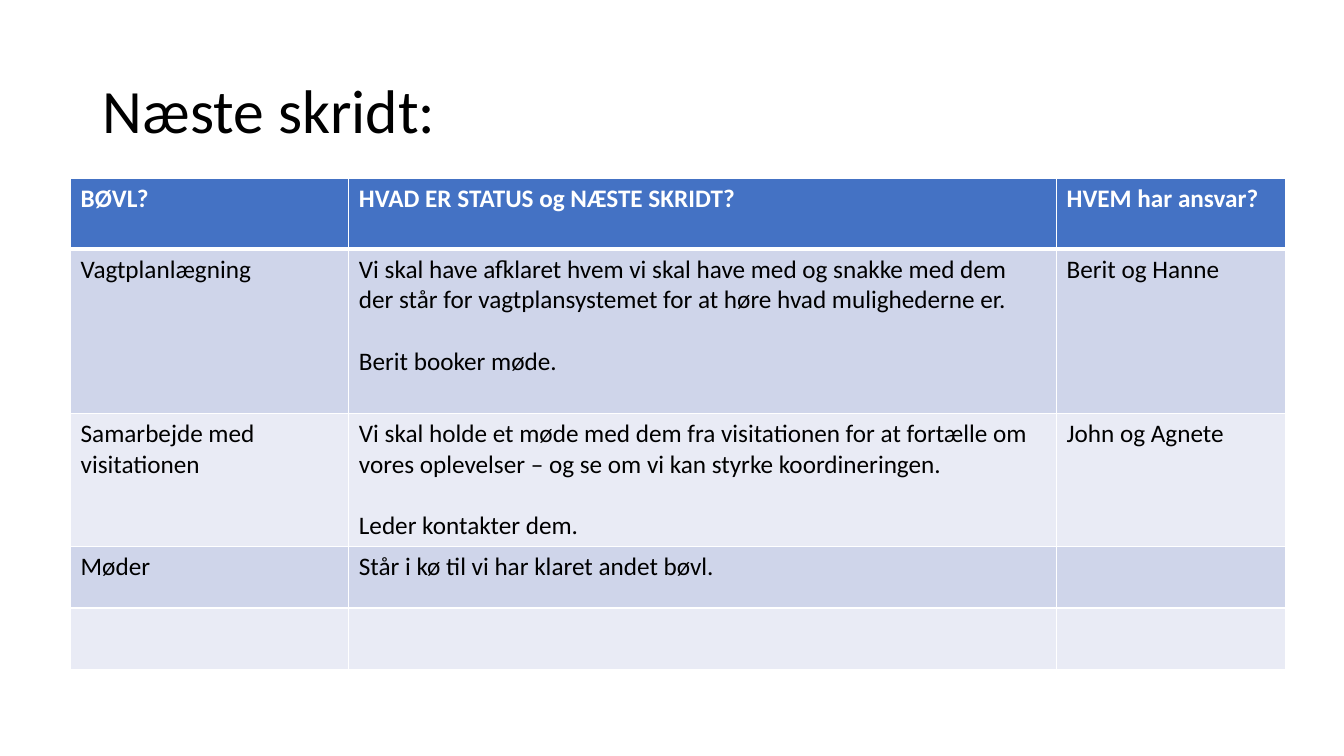
from lxml.etree import SubElement
from pptx import Presentation
from pptx.dml.color import RGBColor as Rgb
from pptx.enum.text import MSO_ANCHOR as Anchor, MSO_AUTO_SIZE as AutoSize, PP_ALIGN as Align
from pptx.oxml.ns import qn
from pptx.util import Emu, Pt

EMU_PER_PX = 9144
COLORS = {
    "white": "FFFFFF",
    "black": "000000",
    "header": "4472C4",
    "odd": "CFD5EA",
    "even": "E9EBF5",
}
COLUMN_WIDTHS = [276, 702, 227]
ROW_HEIGHTS = [70, 163, 132, 61, 61]
ROWS = [
    [["BØVL?"], ["HVAD ER STATUS og NÆSTE SKRIDT?"], ["HVEM har ansvar?"]],
    [
        ["Vagtplanlægning"],
        [
            "Vi skal have afklaret hvem vi skal have med og snakke med dem "
            "der står for vagtplansystemet for at høre hvad mulighederne er.",
            "Berit booker møde.",
        ],
        ["Berit og Hanne"],
    ],
    [
        ["Samarbejde med visitationen"],
        [
            "Vi skal holde et møde med dem fra visitationen for at fortælle om "
            "vores oplevelser – og se om vi kan styrke koordineringen.",
            "Leder kontakter dem.",
        ],
        ["John og Agnete"],
    ],
    [["Møder"], ["Står i kø til vi har klaret andet bøvl."], []],
    [[], [], []],
]


def px(length):
    return Emu(length * EMU_PER_PX)


def rgb(name):
    return Rgb.from_string(COLORS[name])


class SlideBuilder:
    font = "Calibri"
    title_size = 44
    body_size = 18
    paragraph_gap = 22

    def __init__(self, deck):
        self.page = deck.slides.add_slide(deck.slide_layouts[5])

    def run(self, para, text, size, color, bold=False):
        span = para.add_run()
        span.text = text
        span.font.name = self.font
        span.font.size = Pt(size)
        span.font.bold = bold
        span.font.color.rgb = rgb(color)

    def title(self, text, left, top, width, height):
        box = self.page.shapes.title
        box.left, box.top, box.width, box.height = map(px, (left, top, width, height))
        frame = box.text_frame
        frame.word_wrap = True
        frame.auto_size = AutoSize.NONE
        frame.vertical_anchor = Anchor.MIDDLE
        para = frame.paragraphs[0]
        para.alignment = Align.LEFT
        para.line_spacing = 0.9
        self.run(para, text, self.title_size, "black")

    def borders(self, cell, widths):
        properties = cell._tc.get_or_add_tcPr()
        for side, width in widths.items():
            line = SubElement(properties, qn(f"a:ln{side}"), w=str(Pt(width)))
            fill = SubElement(line, qn("a:solidFill"))
            SubElement(fill, qn("a:srgbClr"), val=COLORS["white"])

    def cell(self, cell, texts, row):
        is_header = row == 0
        self.borders(cell, {"L": 1, "R": 1, "T": 3 if row == 1 else 1, "B": 3 if is_header else 1})
        cell.fill.solid()
        cell.fill.fore_color.rgb = rgb("header" if is_header else "odd" if row % 2 else "even")
        frame = cell.text_frame
        for index, text in enumerate(texts):
            para = frame.add_paragraph() if index else frame.paragraphs[0]
            if index:
                para.space_before = Pt(self.paragraph_gap)
            self.run(para, text, self.body_size, "white" if is_header else "black", is_header)

    def table(self, rows, left, top, widths, heights):
        box = self.page.shapes.add_table(
            len(rows), len(widths), px(left), px(top), px(sum(widths)), px(sum(heights))
        )
        grid = box.table
        for column, width in zip(grid.columns, widths):
            column.width = px(width)
        for row, height in zip(grid.rows, heights):
            row.height = px(height)
        for row, entries in enumerate(rows):
            for column, texts in enumerate(entries):
                self.cell(grid.cell(row, column), texts, row)


def main():
    deck = Presentation()
    deck.slide_width, deck.slide_height = px(1333), px(750)
    builder = SlideBuilder(deck)
    builder.title("Næste skridt:", 92, 40, 1150, 145)
    builder.table(ROWS, 70, 177, COLUMN_WIDTHS, ROW_HEIGHTS)
    deck.save("out.pptx")


if __name__ == "__main__":
    main()
